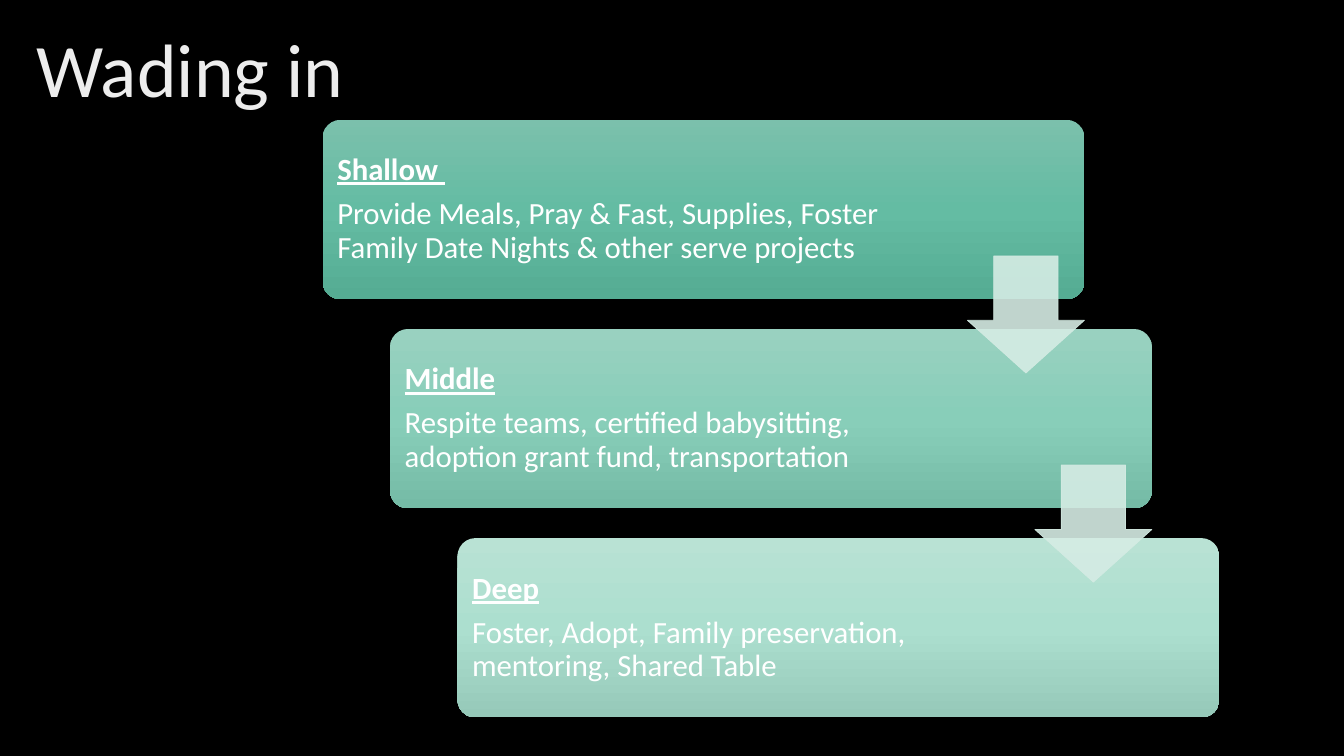
from dataclasses import dataclass

import pptx
import pptx.dml.color
import pptx.enum.shapes
import pptx.enum.text
import pptx.oxml.ns
import pptx.util
from lxml import etree

Cm, Pt = pptx.util.Cm, pptx.util.Pt
RGB = pptx.dml.color.RGBColor.from_string
SHAPE = pptx.enum.shapes.MSO_SHAPE
ANCHOR = pptx.enum.text.MSO_ANCHOR
ALIGN = pptx.enum.text.PP_ALIGN
qn = pptx.oxml.ns.qn


@dataclass(frozen=True)
class Theme:
    font: str = "Calibri"
    title_size: int = 54
    body_size: int = 22
    background: str = "000000"
    text: str = "FFFFFF"
    arrow: str = "D5ECE4"
    title_stops: tuple = ((0, "DEDEDE"), (28, "EDEDED"), (100, "FFFFFF"))


theme = Theme()


def set_gradient(fill, element, stops, angle):
    """Fill with (percent, colour) stops; angle runs clockwise from the right."""
    fill.gradient()
    fill.gradient_angle = 360 - angle
    stop_list = element.find(".//" + qn("a:gsLst"))
    for old_stop in list(stop_list):
        stop_list.remove(old_stop)
    for percent, colour in stops:
        stop = etree.SubElement(stop_list, qn("a:gs"), pos=str(percent * 1000))
        etree.SubElement(stop, qn("a:srgbClr"), val=colour)


def add_span(para, text, size):
    para.alignment = ALIGN.LEFT
    para.line_spacing = 0.9
    span = para.add_run()
    span.text = text
    span.font.name = theme.font
    span.font.size = Pt(size)
    return span


deck = pptx.Presentation()
deck.slide_width, deck.slide_height = Cm(33.87), Cm(19.05)
page = deck.slides.add_slide(deck.slide_layouts[5])
page.background.fill.solid()
page.background.fill.fore_color.rgb = RGB(theme.background)

title = page.shapes.title
title.left, title.top, title.width, title.height = Cm(0.66), Cm(0), Cm(29.21), Cm(3.68)
title.text_frame.vertical_anchor = ANCHOR.MIDDLE
span = add_span(title.text_frame.paragraphs[0], "Wading in", theme.title_size)
set_gradient(span.font.fill, title.element, theme.title_stops, 80)

# Each level steps right and down from the one before
levels = [
    ("Shallow ", "Provide Meals, Pray & Fast, Supplies, Foster Family Date Nights & other serve projects",
     ("7BC0AC", "64BCA3", "55AC93")),
    ("Middle", "Respite teams, certified babysitting, adoption grant fund, transportation",
     ("99D1C0", "88CEB9", "75BBA6")),
    ("Deep", "Foster, Adopt, Family preservation, mentoring, Shared Table",
     ("B9E2D4", "ACDFCF", "96C9B9")),
]
left, top = 8.13, 3.02
step_x, step_y = 1.7, 5.27

for index, (heading, details, colours) in enumerate(levels):
    x, y = left + index * step_x, top + index * step_y
    card = page.shapes.add_shape(SHAPE.ROUNDED_RECTANGLE, Cm(x), Cm(y), Cm(19.2), Cm(4.52))
    card.adjustments[0] = 0.1
    card.shadow.inherit = False
    card.line.fill.background()
    set_gradient(card.fill, card.element, zip((0, 50, 100), colours), 90)

    box = page.shapes.add_textbox(Cm(x + 0.14), Cm(y + 0.14), Cm(14.3), Cm(4.24))
    frame = box.text_frame
    frame.word_wrap = True
    frame.vertical_anchor = ANCHOR.MIDDLE
    frame.margin_left = frame.margin_right = frame.margin_top = frame.margin_bottom = Cm(0.23)
    for para, text in ((frame.paragraphs[0], heading), (frame.add_paragraph(), details)):
        para.space_after = Pt(7.7)
        span = add_span(para, text, theme.body_size)
        span.font.color.rgb = RGB(theme.text)
        span.font.bold = span.font.underline = text == heading

for index in range(len(levels) - 1):
    arrow = page.shapes.add_shape(
        SHAPE.DOWN_ARROW, Cm(24.38 + index * step_x), Cm(6.45 + index * step_y), Cm(2.95), Cm(2.95))
    arrow.adjustments[0], arrow.adjustments[1] = 0.55, 0.45
    arrow.shadow.inherit = False
    arrow.line.width = Pt(0.5)
    for fill in (arrow.fill, arrow.line.fill):
        fill.solid()
        fill.fore_color.rgb = RGB(theme.arrow)
    for colour in arrow.element.iter(qn("a:srgbClr")):
        etree.SubElement(colour, qn("a:alpha"), val="90000")

deck.save("out.pptx")
